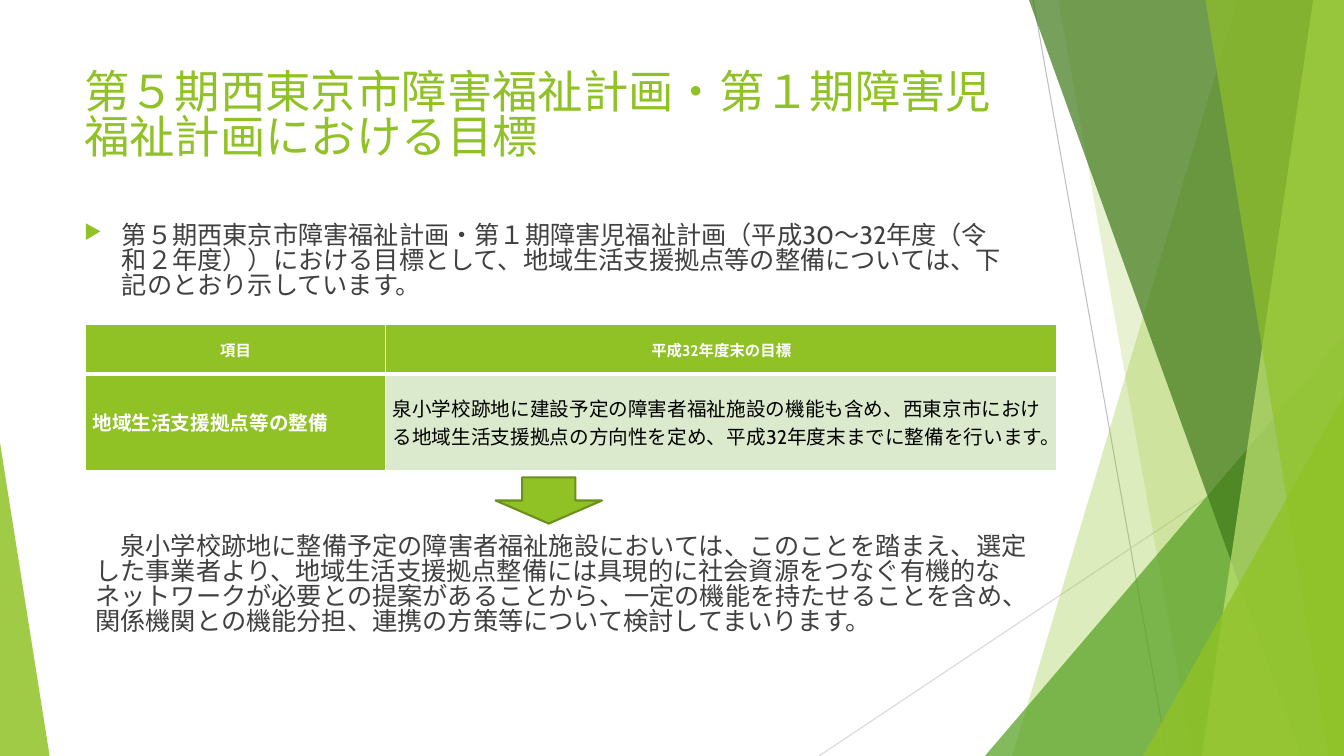
from lxml import etree
from pptx import Presentation
from pptx.dml.color import RGBColor
from pptx.enum.shapes import MSO_CONNECTOR, MSO_SHAPE
from pptx.enum.text import MSO_ANCHOR, PP_ALIGN
from pptx.oxml import parse_xml
from pptx.oxml.ns import nsdecls, qn
from pptx.util import Pt

STRAIGHT = MSO_CONNECTOR.STRAIGHT
TRIANGLE, DOWN_ARROW = MSO_SHAPE.ISOSCELES_TRIANGLE, MSO_SHAPE.DOWN_ARROW
MIDDLE = MSO_ANCHOR.MIDDLE
CENTER, LEFT = PP_ALIGN.CENTER, PP_ALIGN.LEFT

WIDTH, HEIGHT = 960, 540
FONT = "Cabin"
GREEN, WHITE, GREY = "90C226", "FFFFFF", "404040"
TIGHT = 0.83

TITLE = "第５期西東京市障害福祉計画・第１期障害児福祉計画における目標"
INTRO = (
    "第５期西東京市障害福祉計画・第１期障害児福祉計画（平成30～32年度（令和２年度））における"
    "目標として、地域生活支援拠点等の整備については、下記のとおり示しています。"
)
CLOSING = (
    "　泉小学校跡地に整備予定の障害者福祉施設においては、このことを踏まえ、選定した事業者より、"
    "地域生活支援拠点整備には具現的に社会資源をつなぐ有機的なネットワークが必要との提案がある"
    "ことから、一定の機能を持たせることを含め、関係機関との機能分担、連携の方策等について検討して"
    "まいります。"
)
# text, size, colour, bold, alignment, fill
GOAL_ROWS = [
    [
        ("項目", 11, WHITE, True, CENTER, GREEN),
        ("平成32年度末の目標", 11, WHITE, True, CENTER, GREEN),
    ],
    [
        ("地域生活支援拠点等の整備", 14, WHITE, True, LEFT, GREEN),
        (
            "泉小学校跡地に建設予定の障害者福祉施設の機能も含め、西東京市における地域生活支援拠点の"
            "方向性を定め、平成32年度末までに整備を行います。",
            14, "000000", False, LEFT, "DBE9CD",
        ),
    ],
]


def color(hex_code):
    return RGBColor.from_string(hex_code)


def paint(shape, hex_code, opacity=100):
    """Fill a shape without outline or shadow; opacity is in percent."""
    shape.shadow.inherit = False
    shape.line.fill.background()
    shape.fill.solid()
    shape.fill.fore_color.rgb = color(hex_code)
    if opacity < 100:
        tint = shape.fill._xPr.find(f".//{qn('a:srgbClr')}")
        etree.SubElement(tint, qn("a:alpha")).set("val", str(opacity * 1000))


def add_line(page, start, end, hex_code):
    line = page.shapes.add_connector(STRAIGHT, *map(Pt, start + end))
    line.line.color.rgb = color(hex_code)
    line.line.width = Pt(0.75)
    etree.SubElement(line._element.spPr, qn("a:effectLst"))


def add_band(page, top_left, top_right, bottom_left, hex_code, opacity):
    """Full-height band whose lower right corner is the slide corner."""
    builder = page.shapes.build_freeform(Pt(top_left), 0)
    corners = [(top_right, 0), (WIDTH, HEIGHT), (bottom_left, HEIGHT)]
    builder.add_line_segments([(Pt(x), Pt(y)) for x, y in corners])
    paint(builder.convert_to_shape(), hex_code, opacity)


def add_triangle(page, left, top, width, apex, hex_code, opacity):
    """Triangle standing on the lower edge; apex is 0 (left) to 1 (right)."""
    shape = page.shapes.add_shape(
        TRIANGLE, Pt(left), Pt(top), Pt(width), Pt(HEIGHT - top)
    )
    shape.adjustments[0] = apex
    paint(shape, hex_code, opacity)


def add_backdrop(page):
    add_line(page, (738, 0), (834, HEIGHT), "BFBFBF")
    add_line(page, (WIDTH, 290), (585, HEIGHT), "D9D9D9")
    add_band(page, 884, WIDTH, 723, GREEN, 30)
    add_band(page, 756, WIDTH, 852, GREEN, 20)
    add_triangle(page, 703.5, 240, 256.5, 1, "54A021", 72)
    add_band(page, 735, WIDTH, 929.5, "3F7819", 70)
    add_band(page, 938, WIDTH, 858.5, "C0E474", 70)
    add_band(page, 861, WIDTH, 949, GREEN, 65)
    add_triangle(page, 816.5, 283, 143.5, 1, GREEN, 80)
    add_triangle(page, 0, 316, 35.5, 0, GREEN, 85)


def write(frame, text, size, hex_code, bold=False):
    frame.word_wrap = True
    frame.text = text
    para = frame.paragraphs[0]
    font = para.runs[0].font
    font.name, font.size, font.bold = FONT, Pt(size), bold
    font.color.rgb = color(hex_code)
    return para


def add_text(page, left, top, width, height, text, size, hex_code):
    box = page.shapes.add_textbox(Pt(left), Pt(top), Pt(width), Pt(height))
    para = write(box.text_frame, text, size, hex_code)
    para.line_spacing = TIGHT
    return para


def add_bullet(para, indent):
    props = para._p.get_or_add_pPr()
    props.set("marL", str(Pt(indent)))
    props.set("indent", str(-Pt(indent)))
    for xml in (
        f'<a:buClr {nsdecls("a")}><a:srgbClr val="{GREEN}"/></a:buClr>',
        f'<a:buSzPct {nsdecls("a")} val="80000"/>',
        f'<a:buChar {nsdecls("a")} char="▶"/>',
    ):
        props.append(parse_xml(xml))


def add_borders(cell, bottom_width):
    props = cell._tc.get_or_add_tcPr()
    widths = {"lnL": 1, "lnR": 1, "lnT": 1, "lnB": bottom_width}
    for place, (tag, width) in enumerate(widths.items()):
        props.insert(place, parse_xml(
            f'<a:{tag} {nsdecls("a")} w="{Pt(width)}"><a:solidFill>'
            f'<a:srgbClr val="{WHITE}"/></a:solidFill></a:{tag}>'
        ))


def add_goal_table(page):
    widths, heights = (214.5, 479.5), (35, 69)
    table = page.shapes.add_table(
        2, 2, Pt(61), Pt(232), Pt(sum(widths)), Pt(sum(heights))
    ).table
    for column, width in zip(table.columns, widths):
        column.width = Pt(width)
    for index, (row, height) in enumerate(zip(table.rows, heights)):
        row.height = Pt(height)
        for cell, content in zip(row.cells, GOAL_ROWS[index]):
            text, size, hex_code, bold, align, fill = content
            cell.margin_left = cell.margin_right = Pt(5)
            cell.margin_top = cell.margin_bottom = 0
            cell.vertical_anchor = MIDDLE
            cell.fill.solid()
            cell.fill.fore_color.rgb = color(fill)
            write(cell.text_frame, text, size, hex_code, bold).alignment = align
            add_borders(cell, 3 if index == 0 else 1)


def add_arrow(page):
    arrow = page.shapes.add_shape(DOWN_ARROW, Pt(354), Pt(341), Pt(76), Pt(33))
    paint(arrow, GREEN)
    arrow.line.color.rgb = color("6B901C")
    arrow.line.width = Pt(1.5)


def main():
    deck = Presentation()
    deck.slide_width, deck.slide_height = Pt(WIDTH), Pt(HEIGHT)
    page = deck.slides.add_slide(deck.slide_layouts[6])
    add_backdrop(page)
    add_text(page, 53, 48, 677, 92, TITLE, 32.4, GREEN)
    intro = add_text(page, 53, 157, 677, 75, INTRO, 18, GREY)
    add_bullet(intro, 27)
    add_goal_table(page)
    closing = add_text(page, 61, 379, 694, 99, CLOSING, 18, GREY)
    for para in (intro, closing):
        para.space_before = Pt(10)
    add_arrow(page)
    deck.save("out.pptx")


if __name__ == "__main__":
    main()
